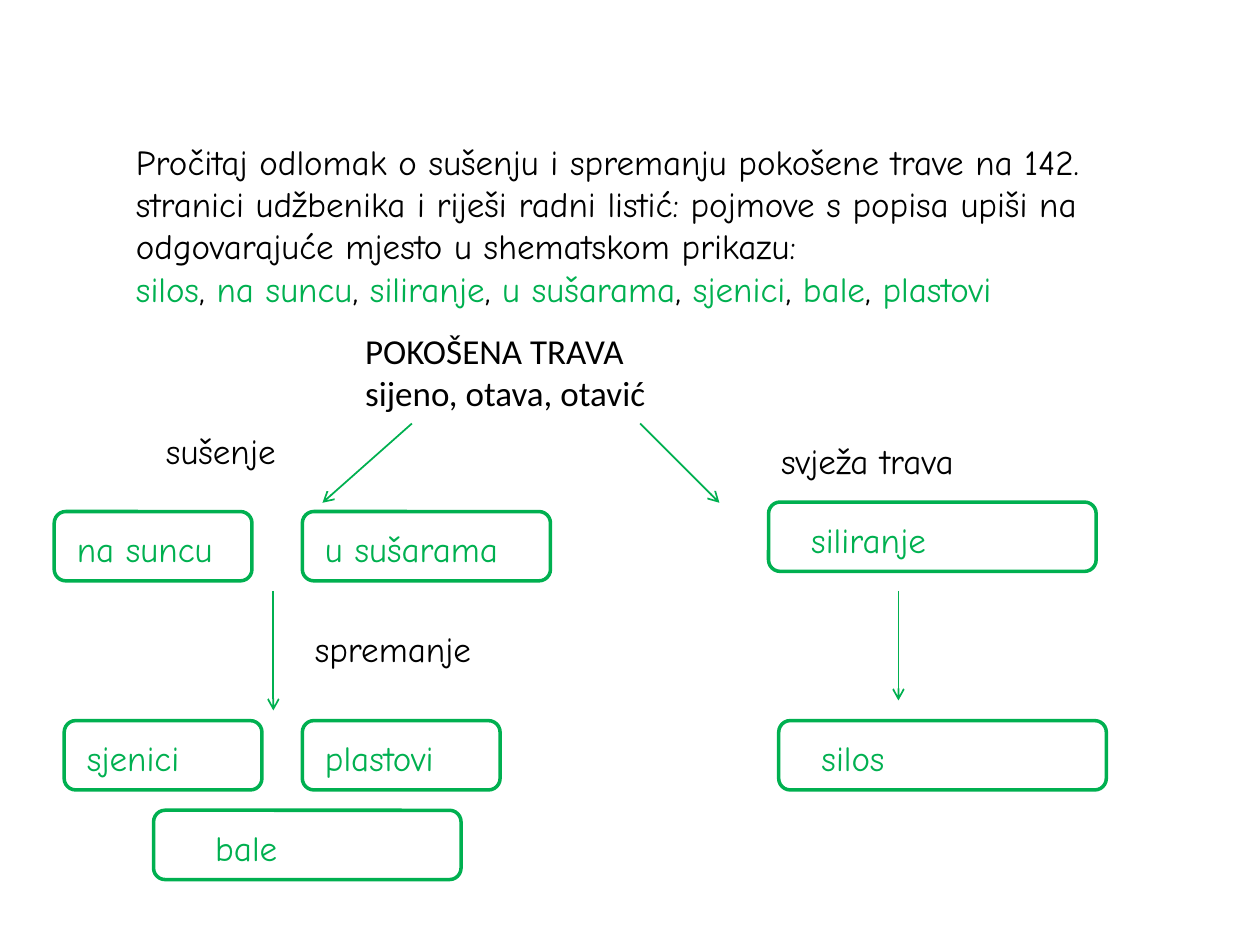
from dataclasses import dataclass

import pptx
import pptx.dml.color
import pptx.enum.shapes
import pptx.enum.text
import pptx.oxml
import pptx.oxml.ns
import pptx.slide
import pptx.util
from pptx.util import Pt

COLOURS = {"text": "000000", "green": "00B050"}
HAND_FONT = "Comic Neue"
PLAIN_FONT = "Calibri"
TEXT_SIZE = 20
LABEL_HEIGHT = 31.7
BOX_HEIGHT = 39.6
TEXT_DROP = 5.8


@dataclass
class Label:
    lines: list[str]
    left: float
    top: float
    width: float
    height: float = LABEL_HEIGHT
    font: str = HAND_FONT
    colour: str = "text"


@dataclass
class TermBox:
    term: str
    left: float
    top: float
    width: float
    text_width: float
    text_indent: float = 5.8


@dataclass
class Arrow:
    start: tuple[float, float]
    end: tuple[float, float]


def rgb(name: str) -> pptx.dml.color.RGBColor:
    return pptx.dml.color.RGBColor.from_string(COLOURS[name])


def format_run(span, font: str, colour: str) -> None:
    span.font.name = font
    span.font.size = Pt(TEXT_SIZE)
    span.font.color.rgb = rgb(colour)


def draw_label(page: pptx.slide.Slide, label: Label):
    box = page.shapes.add_textbox(
        Pt(label.left), Pt(label.top), Pt(label.width), Pt(label.height))
    frame = box.text_frame
    frame.word_wrap = True
    frame.auto_size = pptx.enum.text.MSO_AUTO_SIZE.SHAPE_TO_FIT_TEXT
    frame.text = "\n".join(label.lines)
    for para in frame.paragraphs:
        for span in para.runs:
            format_run(span, label.font, label.colour)
    return frame


def draw_term_box(page: pptx.slide.Slide, item: TermBox) -> None:
    box = page.shapes.add_shape(
        pptx.enum.shapes.MSO_SHAPE.ROUNDED_RECTANGLE,
        Pt(item.left), Pt(item.top), Pt(item.width), Pt(BOX_HEIGHT))
    box.shadow.inherit = False
    box.fill.background()
    box.line.color.rgb = rgb("green")
    box.line.width = Pt(2)
    draw_label(page, Label([item.term], item.left + item.text_indent,
                           item.top + TEXT_DROP, item.text_width, colour="green"))


def draw_arrow(page: pptx.slide.Slide, arrow: Arrow) -> None:
    line = page.shapes.add_connector(
        pptx.enum.shapes.MSO_CONNECTOR.STRAIGHT,
        *(Pt(value) for value in arrow.start + arrow.end))
    line.line.color.rgb = rgb("green")
    line.line.width = Pt(1)
    tail = pptx.oxml.parse_xml(
        f'<a:tailEnd {pptx.oxml.ns.nsdecls("a")} type="arrow"/>')
    line.line._get_or_add_ln().append(tail)
    line._element.spPr.append(pptx.oxml.parse_xml(
        f'<a:effectLst {pptx.oxml.ns.nsdecls("a")}/>'))


TASK = Label(
    ["Pročitaj odlomak o sušenju i spremanju pokošene trave na 142. stranici "
     "udžbenika i riješi radni listić: pojmove s popisa upiši na "
     "odgovarajuće mjesto u shematskom prikazu:"],
    70.6, 77, 617.8, 104.4)
TERMS = ["silos", "na suncu", "siliranje", "u sušarama", "sjenici", "bale", "plastovi"]

LABELS = [
    Label(["POKOŠENA TRAVA", "sijeno, otava, otavić"],
          201.6, 185, 244, 55.4, font=PLAIN_FONT),
    Label(["sušenje"], 87.8, 242, 108),
    Label(["svježa trava"], 439.2, 247.7, 147.6),
    Label(["spremanje"], 172.8, 355, 147.6),
]

DRYING_TOP, STORING_TOP = 292.3, 411.8
TERM_BOXES = [
    TermBox("na suncu", 31, DRYING_TOP, 113, 102.2),
    TermBox("u sušarama", 172.8, DRYING_TOP, 141.8, 130.3),
    TermBox("siliranje", 439.2, 286.9, 187.2, 141.8, 17.3),
    TermBox("sjenici", 36.7, STORING_TOP, 113, 102.2),
    TermBox("plastovi", 172.8, STORING_TOP, 113, 102.2),
    TermBox("silos", 445, STORING_TOP, 187.2, 102.2, 17.3),
    TermBox("bale", 87.8, 463, 175.7, 102.2, 28.1),
]

ARROWS = [
    Arrow((235.4, 242), (184.3, 287.3)),
    Arrow((365.8, 242), (411.1, 287.3)),
    Arrow((156.2, 337.7), (156.2, 406)),
    Arrow((513.4, 337.7), (513.4, 400.3)),
]


def main() -> None:
    deck = pptx.Presentation()
    deck.slide_width, deck.slide_height = Pt(720), Pt(540)
    page = deck.slides.add_slide(deck.slide_layouts[6])

    # Task with the list of terms
    terms_para = draw_label(page, TASK).add_paragraph()
    for index, term in enumerate(TERMS):
        if index:
            comma = terms_para.add_run()
            comma.text = ", "
            format_run(comma, HAND_FONT, "text")
        span = terms_para.add_run()
        span.text = term
        format_run(span, HAND_FONT, "green")

    # Diagram
    for label in LABELS:
        draw_label(page, label)
    for arrow in ARROWS:
        draw_arrow(page, arrow)
    for item in TERM_BOXES:
        draw_term_box(page, item)

    deck.save("out.pptx")


if __name__ == "__main__":
    main()
